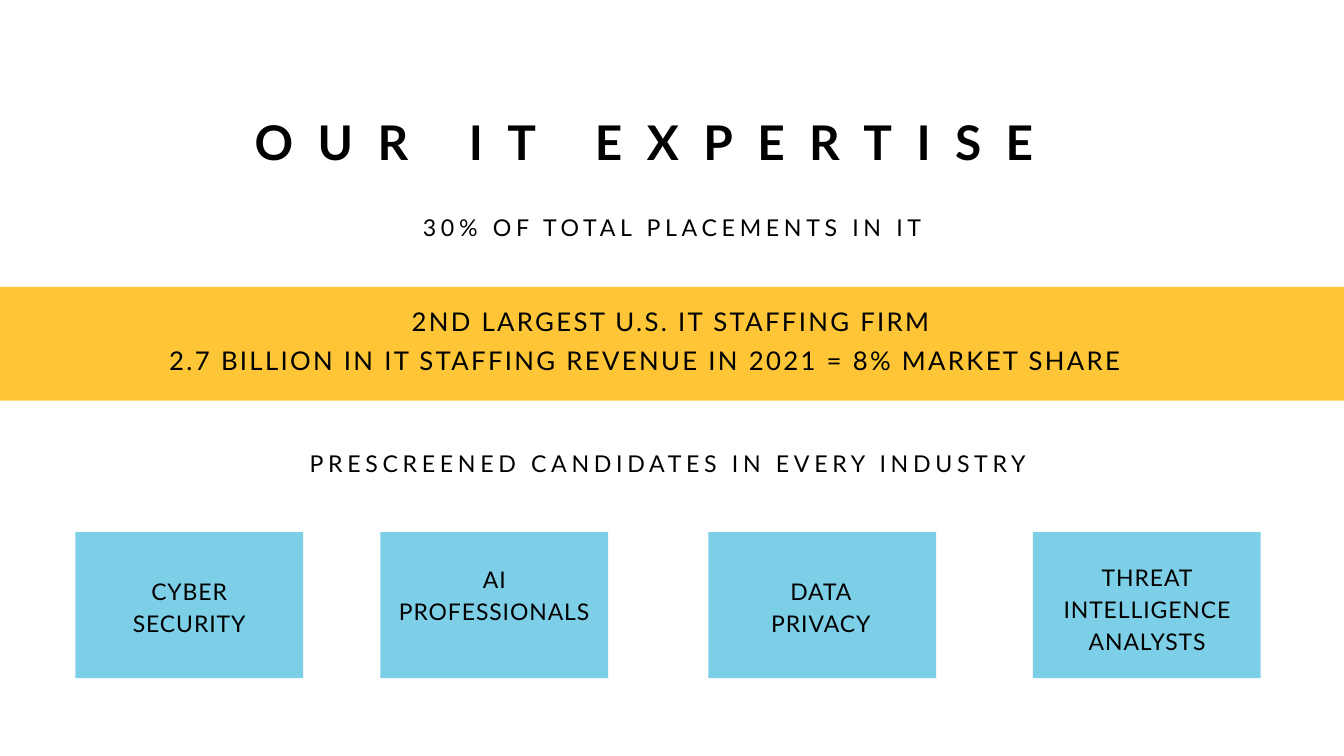
from dataclasses import dataclass

from pptx import Presentation
from pptx.dml.color import RGBColor
from pptx.enum.shapes import MSO_SHAPE
from pptx.enum.text import MSO_ANCHOR, MSO_AUTO_SIZE, PP_ALIGN
from pptx.util import Inches, Pt


@dataclass(frozen=True)
class Theme:
    font: str = "Lato"
    ink: str = "000000"
    card: str = "7DCEE7"
    band: str = "FEC537"
    title: float = 51.2
    band_text: float = 27.6
    line: float = 24.8
    label: float = 24.6
    leading: float = 1.4  # line height as a multiple of type size


@dataclass(frozen=True)
class Box:
    left: float
    top: float
    width: float
    height: float

    def emu(self) -> tuple:
        return tuple(Inches(v) for v in (self.left, self.top, self.width, self.height))


@dataclass(frozen=True)
class Line:
    text: str
    box: Box
    size: float
    spacing: float
    inset_right: float = 0


@dataclass(frozen=True)
class Card:
    left: float
    label: str
    label_box: Box


THEME = Theme()
SLIDE_W, SLIDE_H = 20, 11.25
BLEED = 0.61
CARD_TOP, CARD_W, CARD_H = 7.92, 3.39, 2.17

LINES = [
    Line("30% OF TOTAL PLACEMENTS IN IT", Box(5.92, 3.1, 8.17, 0.46), THEME.line, 5),
    Line("2ND LARGEST U.S. IT STAFFING FIRM",
         Box(2.85, 4.47, 14.59, 0.51), THEME.band_text, 2.5, 0.33),
    Line("2.7 BILLION IN IT STAFFING REVENUE IN 2021 = 8% MARKET SHARE",
         Box(1.84, 5.06, 15.85, 0.51), THEME.band_text, 2.5, 0.33),
    Line("PRESCREENED CANDIDATES IN EVERY INDUSTRY",
         Box(3.94, 6.62, 12.41, 0.46), THEME.line, 5, 0.41),
]

CARDS = [
    Card(1.12, "CYBER\nSECURITY", Box(1.84, 8.52, 1.95, 0.92)),
    Card(5.66, "AI\nPROFESSIONALS", Box(5.76, 8.35, 3.19, 0.92)),
    Card(10.54, "DATA\nPRIVACY", Box(11.34, 8.52, 1.75, 0.92)),
    Card(15.37, "THREAT\nINTELLIGENCE\nANALYSTS", Box(15.58, 8.32, 2.98, 1.39)),
]


def write_text(sp, text: str, *, size: float, spacing: float, bold: bool = False,
               align=PP_ALIGN.CENTER, inset_right: float = 0) -> None:
    """Fill a shape with one paragraph per line of text; spacing is in points."""
    tf = sp.text_frame
    tf.text = text
    tf.word_wrap = True
    tf.auto_size = MSO_AUTO_SIZE.SHAPE_TO_FIT_TEXT
    tf.vertical_anchor = MSO_ANCHOR.TOP
    tf.margin_left = tf.margin_top = tf.margin_bottom = 0
    tf.margin_right = Inches(inset_right)
    for p in tf.paragraphs:
        p.alignment = align
        p.line_spacing = Pt(round(size * THEME.leading, 1))
        p.space_before = Pt(0)
        for r in p.runs:
            r.font.name = THEME.font
            r.font.size = Pt(size)
            r.font.bold = bold
            r.font.color.rgb = RGBColor.from_string(THEME.ink)
            r.font._element.set("spc", str(round(spacing * 100)))


def add_block(slide, box: Box, color: str) -> None:
    sp = slide.shapes.add_shape(MSO_SHAPE.RECTANGLE, *box.emu())
    sp.shadow.inherit = False
    sp.fill.solid()
    sp.fill.fore_color.rgb = RGBColor.from_string(color)
    sp.line.fill.background()


def add_line(slide, line: Line) -> None:
    sp = slide.shapes.add_textbox(*line.box.emu())
    write_text(sp, line.text, size=line.size, spacing=line.spacing,
               inset_right=line.inset_right)


def add_card(slide, card: Card) -> None:
    add_block(slide, Box(card.left, CARD_TOP, CARD_W, CARD_H), THEME.card)
    add_line(slide, Line(card.label, card.label_box, THEME.label, 1))


def main() -> None:
    prs = Presentation()
    prs.slide_width, prs.slide_height = Inches(SLIDE_W), Inches(SLIDE_H)
    slide = prs.slides.add_slide(prs.slide_layouts[5])  # Title Only

    # Title
    title = slide.shapes.title
    title.left, title.top, title.width, title.height = Box(3.79, 1.54, 13.5, 0.95).emu()
    write_text(title, "OUR IT EXPERTISE", size=THEME.title, spacing=26.2,
               bold=True, align=PP_ALIGN.JUSTIFY)

    # Full-bleed band and the centred statements
    add_block(slide, Box(-BLEED, 4.27, SLIDE_W + 2 * BLEED, 1.69), THEME.band)
    for line in LINES:
        add_line(slide, line)

    # Expertise cards
    for card in CARDS:
        add_card(slide, card)

    prs.save("out.pptx")


if __name__ == "__main__":
    main()
